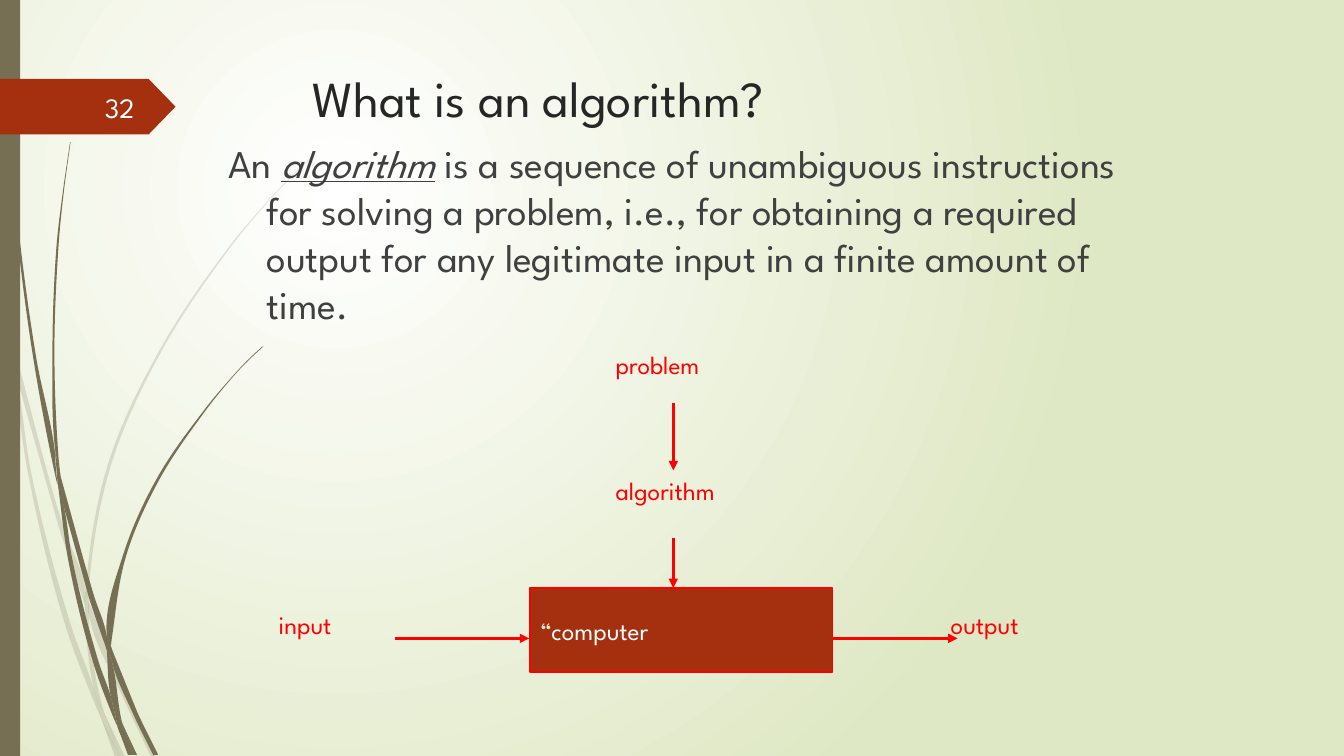
from collections import namedtuple
from dataclasses import dataclass
from math import dist

from lxml import etree
from pptx import Presentation
from pptx import util as u
from pptx.dml.color import RGBColor
from pptx.enum import shapes, text
from pptx.oxml import parse_xml
from pptx.oxml.ns import nsdecls, qn

COLS, ROWS = 160, 90
CELL = u.Inches(7.5) / ROWS
FINE = ROWS / 750

PALE_STEMS = [
    [(11, 350), (9, 322), (0, 282), (0, 299), (10, 344)],
    [(58, 522), (84, 599), (85, 586), (62, 520), (14, 345), (17, 376)],
    [(92, 607), (88, 596), (88, 610), (123, 694), (150, 751), (155, 751), (127, 692)],
    [(119, 751), (124, 751), (105, 711)],
    [(93, 683), (70, 619), (31, 469), (17, 376), (11, 350), (28, 470), (65, 621),
     (92, 693), (101, 714), (99, 707)],
    [(84, 599), (87, 646), (93, 683), (96, 692), (105, 711), (103, 706), (91, 646),
     (88, 610), (88, 608)],
    [(88, 584), (110, 462), (160, 349), (229, 245), (268, 198), (290, 175), (312, 154),
     (312, 153), (289, 175), (268, 197), (228, 244), (158, 348), (107, 461), (85, 584),
     (85, 586), (88, 596)],
    [(101, 714), (114, 751), (119, 751)],
    [(88, 608), (88, 610), (88, 596), (85, 586), (84, 599)],
    [(96, 692), (93, 683), (99, 707), (101, 714), (119, 751), (105, 711)],
]
DARK_STEMS = [
    [(7, 110), (17, 233), (33, 355), (56, 477), (57, 481), (55, 457), (55, 453),
     (36, 355), (19, 232), (8, 109), (5, 48), (4, 0), (3, 0), (4, 48)],
    [(88, 592), (106, 645), (106, 633), (106, 631), (93, 590), (60, 472), (64, 505)],
    [(113, 649), (110, 641), (111, 656), (132, 708), (152, 749), (157, 749), (136, 706)],
    [(110, 691), (98, 657), (72, 556), (64, 505), (57, 477), (68, 557), (93, 659),
     (111, 708), (117, 722), (116, 717)],
    [(60, 472), (58, 453), (54, 349), (58, 245), (63, 193), (70, 141), (69.5, 141),
     (62, 193), (56, 245), (52, 349), (55, 449)],
    [(133, 749), (136, 749), (122, 719)],
    [(57, 477), (64, 505), (60, 472), (55, 449), (55, 453)],
    [(111, 633), (125, 552), (158, 476), (205, 406), (231, 374), (245, 359), (261, 344),
     (260, 344), (245, 358), (231, 373), (204, 405), (156, 474), (122, 551), (106, 631),
     (110, 641)],
    [(117, 722), (127, 749), (131, 749)],
    [(106, 645), (110, 691), (116, 706), (122, 719), (121, 716), (111, 656), (109, 651)],
    [(106, 645), (109, 651), (111, 656), (110, 641), (106, 631), (106, 633)],
    [(116, 706), (110, 691), (116, 717), (117, 722), (130, 749), (133, 749), (122, 719)],
]


@dataclass(frozen=True)
class Theme:
    font: str = "League Spartan"
    glow: str = "FFFFFF"
    page: str = "DFE8C4"
    stem: str = "766F54"
    accent: str = "A53010"
    signal: str = "FF0000"
    title: str = "262626"
    body: str = "404040"
    number: str = "FEFFFF"
    quote: str = "E3EACF"
    title_size: int = 36
    body_size: int = 28
    number_size: int = 20
    label_size: int = 18


T = Theme()


class Box(namedtuple("Box", "x y w h")):
    def sub(self, x, y, w, h):
        return Box(self.x + x, self.y + y, w, h)

    def point(self, x, y):
        return emu(self.x + x), emu(self.y + y)

    def emus(self):
        return [emu(v) for v in self]


def emu(cells):
    return u.Emu(round(cells * CELL))


def paint(sp, color, alpha=None):
    sp.shadow.inherit = False
    sp.fill.solid()
    sp.fill.fore_color.rgb = RGBColor.from_string(color)
    sp.line.fill.background()
    if alpha:
        clr = sp.fill._xPr.find(qn("a:solidFill"))[0]
        etree.SubElement(clr, qn("a:alpha")).set("val", str(alpha * 1000))


def add_run(p, words, size, color, accent=False):
    r = p.add_run()
    r.text = words
    r.font.name, r.font.size = T.font, u.Pt(size)
    r.font.color.rgb = RGBColor.from_string(color)
    if accent:
        r.font.italic = r.font.underline = True


def add_text(s, box, anchor=text.MSO_ANCHOR.TOP):
    tf = s.shapes.add_textbox(*box.emus()).text_frame
    tf.word_wrap = True
    tf.vertical_anchor = anchor
    return tf.paragraphs[0]


def background(s):
    s.background.fill.solid()
    bg = s.background._cSld.find(qn("p:bg")).find(qn("p:bgPr"))
    bg.replace(bg[0], parse_xml(
        f'<a:gradFill {nsdecls("a")} rotWithShape="1"><a:gsLst>'
        f'<a:gs pos="0"><a:srgbClr val="{T.glow}"/></a:gs>'
        f'<a:gs pos="100000"><a:srgbClr val="{T.page}"/></a:gs></a:gsLst>'
        '<a:path path="circle"><a:fillToRect l="50000" t="50000" r="100000" b="100000"/>'
        '</a:path></a:gradFill>'))


def outline(parent, points):
    fb = parent.shapes.build_freeform(*points[0], scale=1.0)
    fb.add_line_segments(points[1:], close=True)
    return fb.convert_to_shape()


def handle(before, knot, after, toward):
    a, b = dist(before, knot), dist(knot, after)
    dx, dy = ((n - k) / b + (k - m) / a for m, k, n in zip(before, knot, after))
    bend = (dx * dx + dy * dy) ** .5
    if bend < 1.9:
        return [k + (t - k) / 3 for k, t in zip(knot, toward)]
    reach = dist(knot, toward) / 3 / bend * (1 if toward == after else -1)
    return knot[0] + dx * reach, knot[1] + dy * reach


def bend_edges(sp):
    knots = [(int(pt.get("x")), int(pt.get("y"))) for pt in sp._element.iter(qn("a:pt"))]
    n = len(knots)
    for i, edge in enumerate(list(sp._element.iter(qn("a:lnTo")))):
        prior, start, end, later = (knots[(i + k) % n] for k in (-1, 0, 1, 2))
        curve = etree.Element(qn("a:cubicBezTo"))
        for x, y in (handle(prior, start, end, end), handle(start, end, later, start), end):
            pt = etree.SubElement(curve, qn("a:pt"))
            pt.set("x", str(round(x)))
            pt.set("y", str(round(y)))
        edge.getparent().replace(edge, curve)


def stems(s, box):
    for pieces, alpha in ((PALE_STEMS, 20), (DARK_STEMS, None)):
        group = s.shapes.add_group_shape()
        for knots in pieces:
            sp = outline(group, [box.point(x * FINE, y * FINE) for x, y in knots])
            bend_edges(sp)
            paint(sp, T.stem, alpha)
    bar = s.shapes.add_shape(shapes.MSO_SHAPE.RECTANGLE, *box.sub(0, 0, 2.4, box.h).emus())
    paint(bar, T.stem)


def number_tag(s, box):
    neck = box.w - 3.2
    paint(outline(s, [box.point(*c) for c in (
        (box.w, box.h / 2), (neck, box.h), (0, box.h), (0, 0), (neck, 0))]), T.accent)
    p = add_text(s, box.sub(7, .95, 10.2, 4.8), text.MSO_ANCHOR.MIDDLE)
    p.alignment = text.PP_ALIGN.RIGHT
    add_run(p, "32", T.number_size, T.number)


def title(s, box):
    add_run(add_text(s, box, text.MSO_ANCHOR.MIDDLE),
            "What is an algorithm?", T.title_size, T.title)


def definition(s, box):
    p = add_text(s, box)
    p.space_before = u.Pt(10)
    indent = u.Inches(.38)
    p._p.get_or_add_pPr().set("marL", str(indent))
    p._p.get_or_add_pPr().set("indent", str(-indent))
    for words, accent in (
            ("An ", False), ("algorithm", True),
            (" is a sequence of unambiguous instructions for solving a problem, "
             "i.e., for obtaining a required output for any legitimate input "
             "in a finite amount of time.", False)):
        add_run(p, words, T.body_size, T.body, accent)


def arrow(s, start, end):
    cn = s.shapes.add_connector(shapes.MSO_CONNECTOR.STRAIGHT, *start, *end)
    cn.line.color.rgb = RGBColor.from_string(T.signal)
    cn.line.width = u.Pt(2.25)
    etree.SubElement(cn.line._get_or_add_ln(), qn("a:tailEnd")).set("type", "triangle")
    etree.SubElement(cn._element.spPr, qn("a:effectLst"))


def diagram(s, box):
    sp = s.shapes.add_shape(shapes.MSO_SHAPE.RECTANGLE, *box.sub(31.12, 29, 36, 10).emus())
    paint(sp, T.accent)
    sp.line.color.rgb = RGBColor.from_string(T.signal)
    sp.line.width = u.Pt(1)
    tf = sp.text_frame
    tf.vertical_anchor = text.MSO_ANCHOR.MIDDLE
    p = tf.paragraphs[0]
    p.alignment = text.PP_ALIGN.LEFT
    add_run(p, "“", T.label_size, T.quote)
    add_run(p, "computer", T.label_size, T.glow)
    for words, x, y in (("problem", 40.12, 0), ("algorithm", 40.12, 15),
                        ("input", 0, 31), ("output", 80, 31)):
        add_run(add_text(s, box.sub(x, y, 16, 4.8)), words, T.label_size, T.signal)
    for start, end in (((48.16, 7), (48.16, 15)), ((48.16, 23), (48.16, 29)),
                       ((15, 35), (31, 35)), ((67, 35), (82, 35))):
        arrow(s, box.point(*start), box.point(*end))


def main():
    prs = Presentation()
    prs.slide_width, prs.slide_height = emu(COLS), emu(ROWS)
    s = prs.slides.add_slide(prs.slide_layouts[6])
    background(s)
    stems(s, Box(0, 0, 38, ROWS))
    number_tag(s, Box(0, 9.4, 20.9, 6.6))
    title(s, Box(36, 3.25, 117, 16.8))
    definition(s, Box(26, 16, 114, 67.3))
    diagram(s, Box(32, 41, 96, 39))
    prs.save("out.pptx")


if __name__ == "__main__":
    main()
